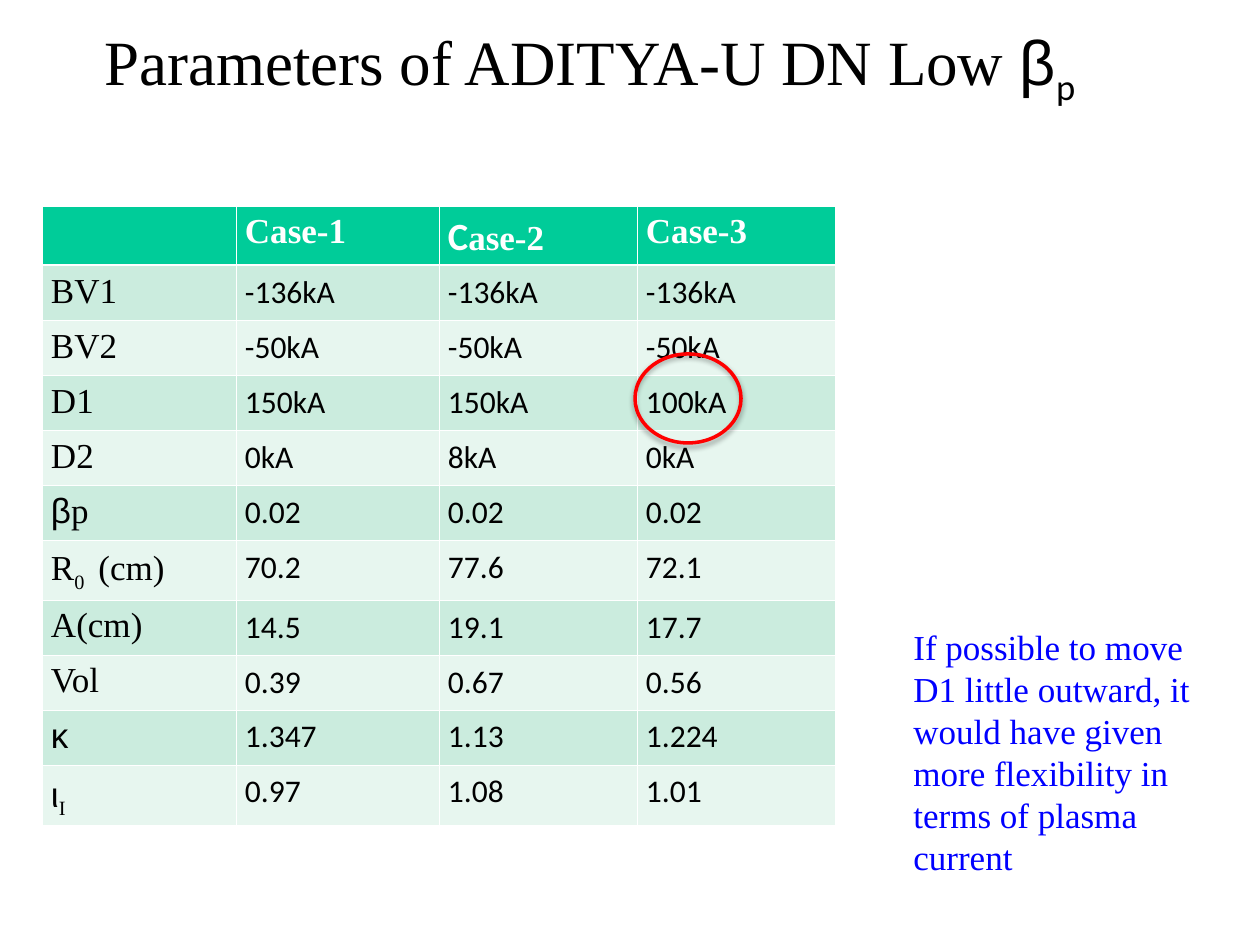
import pptx
import pptx.dml.color
import pptx.enum.shapes
import pptx.enum.text
import pptx.oxml
import pptx.oxml.ns
import pptx.util

PX_PER_INCH = 126
SERIF, SANS, GREEK = "Times New Roman", "Calibri", "Arial"
BLACK, WHITE, RED, BLUE = "000000", "FFFFFF", "FF0000", "0000FF"
HEADER_FILL, BAND_FILLS = "00CC99", ("CBECDE", "E7F6EF")

COLUMN_WIDTHS = (194, 203, 198, 198)
HEADER_HEIGHT, ROW_HEIGHT, SUBSCRIPT_ROW_HEIGHT = 58, 55, 60

# Top margin in px and line spacing that go with each leading font
CELL_LAYOUT = {SERIF: (9, 0.93), SANS: (8, 0.98), GREEK: (15, 0.76)}

# A span is (text, font, size) with an optional True for subscript
HEADERS = (
    [],
    [("Case-1", SERIF, 20)],
    [("C", SANS, 22), ("ase-2", SERIF, 20)],
    [("Case-3", SERIF, 20)],
)
ROWS = (
    ([("BV1", SERIF, 20)], "-136kA", "-136kA", "-136kA"),
    ([("BV2", SERIF, 20)], "-50kA", "-50kA", "-50kA"),
    ([("D1", SERIF, 20)], "150kA", "150kA", "100kA"),
    ([("D2", SERIF, 20)], "0kA", "8kA", "0kA"),
    ([("β", GREEK, 20), ("p", SERIF, 20)], "0.02", "0.02", "0.02"),
    ([("R", SERIF, 20), ("0 ", SERIF, 20, True), (" (cm)", SERIF, 20)],
     "70.2", "77.6", "72.1"),
    ([("A(cm)", SERIF, 20)], "14.5", "19.1", "17.7"),
    ([("Vol", SERIF, 20)], "0.39", "0.67", "0.56"),
    ([("κ", GREEK, 20)], "1.347", "1.13", "1.224"),
    ([("ι", GREEK, 20), ("I", SERIF, 20, True)], "0.97", "1.08", "1.01"),
)


def px(length):
    return pptx.util.Emu(round(length * 914400 / PX_PER_INCH))


def color(value):
    return pptx.dml.color.RGBColor.from_string(value)


def add_element(parent, xml):
    namespace = pptx.oxml.ns.nsdecls("a")
    parent.append(pptx.oxml.parse_xml(xml.replace(" ", f" {namespace} ", 1)))


def write_spans(paragraph, spans, text_color, bold=False):
    for text, font, size, *subscript in spans:
        span = paragraph.add_run()
        span.text = text
        span.font.name = font
        span.font.size = pptx.util.Pt(size)
        span.font.bold = bold
        span.font.color.rgb = color(text_color)
        if subscript:
            span.font._element.set("baseline", "-25000")


def add_text(page, bounds, spans, text_color, wrap=True, align=None):
    box = page.shapes.add_textbox(*map(px, bounds))
    box.text_frame.word_wrap = wrap
    paragraph = box.text_frame.paragraphs[0]
    paragraph.alignment = align
    write_spans(paragraph, spans, text_color)


def set_borders(cell, top, bottom):
    """Draw white cell borders; top and bottom are widths in points."""
    sides = {"lnL": 0.45, "lnR": 0.45, "lnT": top, "lnB": bottom}
    for side, width in sides.items():
        add_element(
            cell._tc.get_or_add_tcPr(),
            f'<a:{side} w="{pptx.util.Pt(width)}"><a:solidFill>'
            f'<a:srgbClr val="{WHITE}"/></a:solidFill></a:{side}>')


def fill_cell(cell, spans, fill, row_index):
    is_header = row_index == 0
    set_borders(cell, top=1.47 if row_index == 1 else 0.45,
                bottom=1.47 if is_header else 0.45)
    cell.fill.solid()
    cell.fill.fore_color.rgb = color(fill)
    if not spans:
        return
    top_margin, line_spacing = CELL_LAYOUT[spans[0][1]]
    cell.margin_left = cell.margin_right = px(9)
    cell.margin_top, cell.margin_bottom = px(top_margin), px(6)
    paragraph = cell.text_frame.paragraphs[0]
    paragraph.line_spacing = line_spacing
    write_spans(paragraph, spans, WHITE if is_header else BLACK, is_header)


def add_parameter_table(page, left, top):
    heights = [HEADER_HEIGHT]
    content = [HEADERS]
    for label, *values in ROWS:
        has_subscript = any(len(span) > 3 for span in label)
        heights.append(SUBSCRIPT_ROW_HEIGHT if has_subscript else ROW_HEIGHT)
        content.append([label] + [[(value, SANS, 18)] for value in values])

    frame = page.shapes.add_table(
        len(heights), len(COLUMN_WIDTHS), px(left), px(top),
        px(sum(COLUMN_WIDTHS)), px(sum(heights)))
    table = frame.table
    for column, width in zip(table.columns, COLUMN_WIDTHS):
        column.width = px(width)
    for row_index, (row, height) in enumerate(zip(table.rows, heights)):
        row.height = px(height)
        fill = BAND_FILLS[(row_index - 1) % 2] if row_index else HEADER_FILL
        for cell, spans in zip(row.cells, content[row_index]):
            fill_cell(cell, spans, fill, row_index)


def add_highlight_ring(page, bounds):
    ring = page.shapes.add_shape(
        pptx.enum.shapes.MSO_SHAPE.OVAL, *map(px, bounds))
    ring.fill.background()
    ring.line.color.rgb = color(RED)
    ring.line.width = pptx.util.Pt(2)
    blur, distance = pptx.util.Pt(3.1), pptx.util.Pt(1.8)
    add_element(
        ring._element.spPr,
        '<a:effectLst ><a:outerShdw '
        f'blurRad="{blur}" dist="{distance}" dir="5400000" rotWithShape="0">'
        f'<a:srgbClr val="{BLACK}"><a:alpha val="35000"/></a:srgbClr>'
        '</a:outerShdw></a:effectLst>')


def main():
    deck = pptx.Presentation()
    deck.slide_width, deck.slide_height = px(1260), px(945)
    page = deck.slides.add_slide(deck.slide_layouts[6])

    title = [("Parameters of ADITYA-U DN Low ", SERIF, 36),
             ("β", GREEK, 36), ("p", SANS, 36, True)]
    add_text(page, (80, 16, 1020, 166), title, BLACK, wrap=False,
             align=pptx.enum.text.PP_ALIGN.CENTER)
    add_parameter_table(page, 42, 206)
    add_highlight_ring(page, (635, 354, 106, 89))
    note = ("If possible to move D1 little outward, it would have given "
            "more flexibility in terms of plasma current")
    add_text(page, (901, 619, 338, 267), [(note, SERIF, 20)], BLUE)

    deck.save("out.pptx")


if __name__ == "__main__":
    main()
